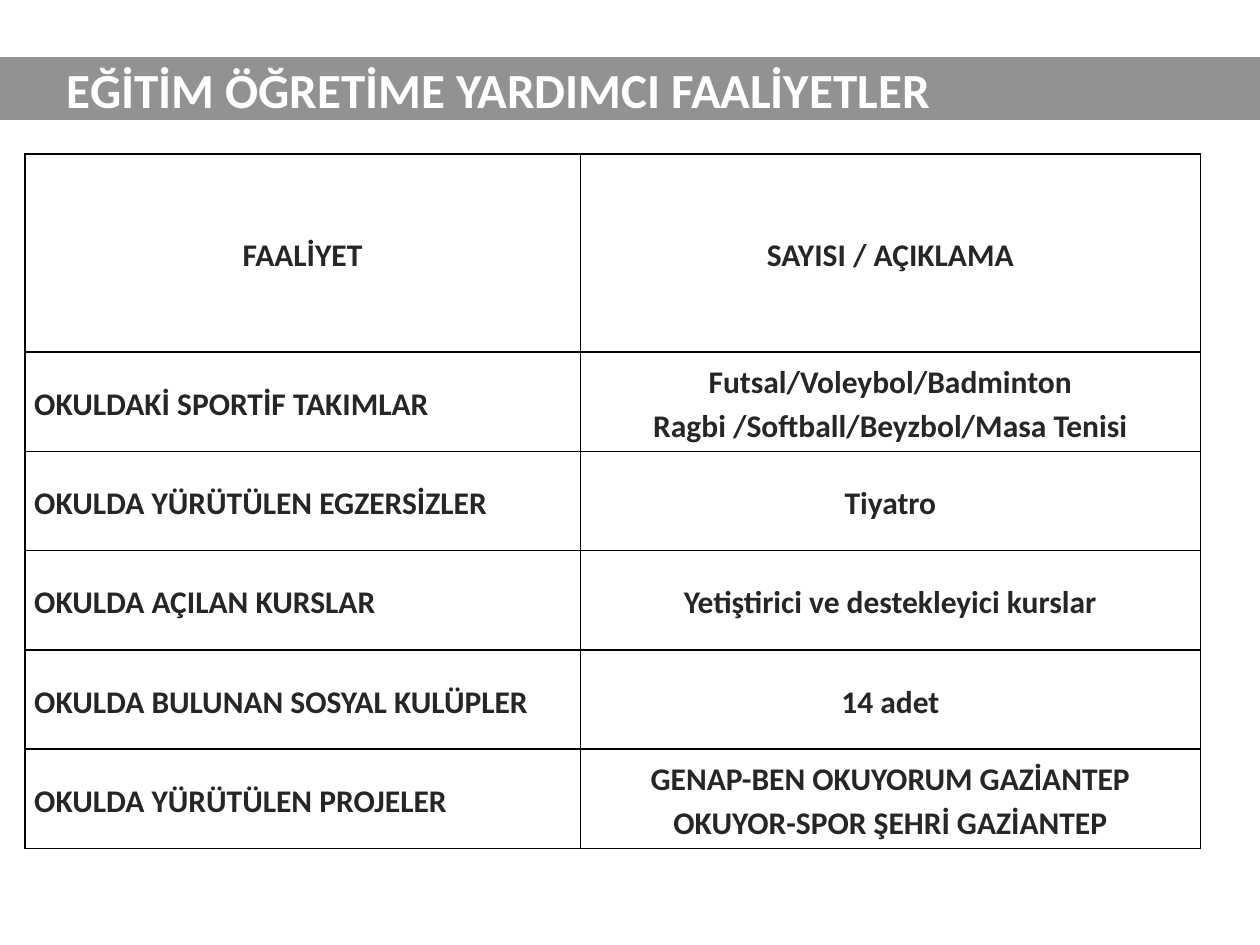
from lxml.etree import SubElement
from pptx import Presentation
from pptx.dml.color import RGBColor
from pptx.enum.text import MSO_ANCHOR, PP_ALIGN
from pptx.oxml.ns import qn
from pptx.util import Cm, Pt

TITLE = "EĞİTİM ÖĞRETİME YARDIMCI FAALİYETLER"
ROWS = [
    ("FAALİYET", "SAYISI / AÇIKLAMA"),
    ("OKULDAKİ SPORTİF TAKIMLAR",
     "Futsal/Voleybol/Badminton\nRagbi /Softball/Beyzbol/Masa Tenisi"),
    ("OKULDA YÜRÜTÜLEN EGZERSİZLER", "Tiyatro"),
    ("OKULDA AÇILAN KURSLAR", "Yetiştirici ve destekleyici kurslar"),
    ("OKULDA BULUNAN SOSYAL KULÜPLER", "14 adet"),
    ("OKULDA YÜRÜTÜLEN PROJELER",
     "GENAP-BEN OKUYORUM GAZİANTEP OKUYOR-SPOR ŞEHRİ GAZİANTEP"),
]
COLUMN_WIDTHS = (11.2, 12.5)
HEADER_HEIGHT = 4
ROW_HEIGHT = 2


def set_fill(item, color):
    item.fill.solid()
    item.fill.fore_color.rgb = RGBColor.from_string(color)


def format_text(frame, size, color, align, spacing):
    for para in frame.paragraphs:
        para.alignment = align
        para.line_spacing = spacing
        for span in para.runs:
            span.font.name = "Calibri"
            span.font.size = Pt(size)
            span.font.bold = True
            span.font.color.rgb = RGBColor.from_string(color)


def add_borders(cell, color, width):
    properties = cell._tc.get_or_add_tcPr()
    for side in ("a:lnL", "a:lnR", "a:lnT", "a:lnB"):
        line = SubElement(properties, qn(side), w=str(Pt(width)))
        fill = SubElement(line, qn("a:solidFill"))
        SubElement(fill, qn("a:srgbClr"), val=color)


def add_title(page):
    title = page.shapes.title
    title.left, title.top = Cm(0), Cm(1.15)
    title.width, title.height = Cm(25.4), Cm(1.27)
    set_fill(title, "929292")
    frame = title.text_frame
    frame.text = TITLE
    frame.vertical_anchor = MSO_ANCHOR.MIDDLE
    frame.margin_left = Cm(1.35)
    frame.margin_top = frame.margin_bottom = Cm(0)
    format_text(frame, 28, "FFFFFF", PP_ALIGN.LEFT, 1.0)


def format_cell(cell, text, align):
    add_borders(cell, "000000", 1)
    set_fill(cell, "FFFFFF")
    cell.margin_left = cell.margin_right = Cm(0.19)
    cell.margin_top = cell.margin_bottom = Cm(0)
    cell.vertical_anchor = MSO_ANCHOR.MIDDLE
    cell.text_frame.text = text
    format_text(cell.text_frame, 18, "262626", align, 1.15)


def add_activity_table(page):
    height = HEADER_HEIGHT + ROW_HEIGHT * (len(ROWS) - 1)
    table = page.shapes.add_table(
        len(ROWS), len(COLUMN_WIDTHS), Cm(0.5), Cm(3.1),
        Cm(sum(COLUMN_WIDTHS)), Cm(height)).table
    for column, width in zip(table.columns, COLUMN_WIDTHS):
        column.width = Cm(width)
    for row_index, texts in enumerate(ROWS):
        is_header = row_index == 0
        table.rows[row_index].height = Cm(HEADER_HEIGHT if is_header else ROW_HEIGHT)
        for column_index, text in enumerate(texts):
            centred = is_header or column_index == 1
            align = PP_ALIGN.CENTER if centred else PP_ALIGN.LEFT
            format_cell(table.cell(row_index, column_index), text, align)


def main():
    deck = Presentation()
    deck.slide_width, deck.slide_height = Cm(25.4), Cm(19.05)
    page = deck.slides.add_slide(deck.slide_layouts[5])
    add_title(page)
    add_activity_table(page)
    deck.save("out.pptx")


if __name__ == "__main__":
    main()
